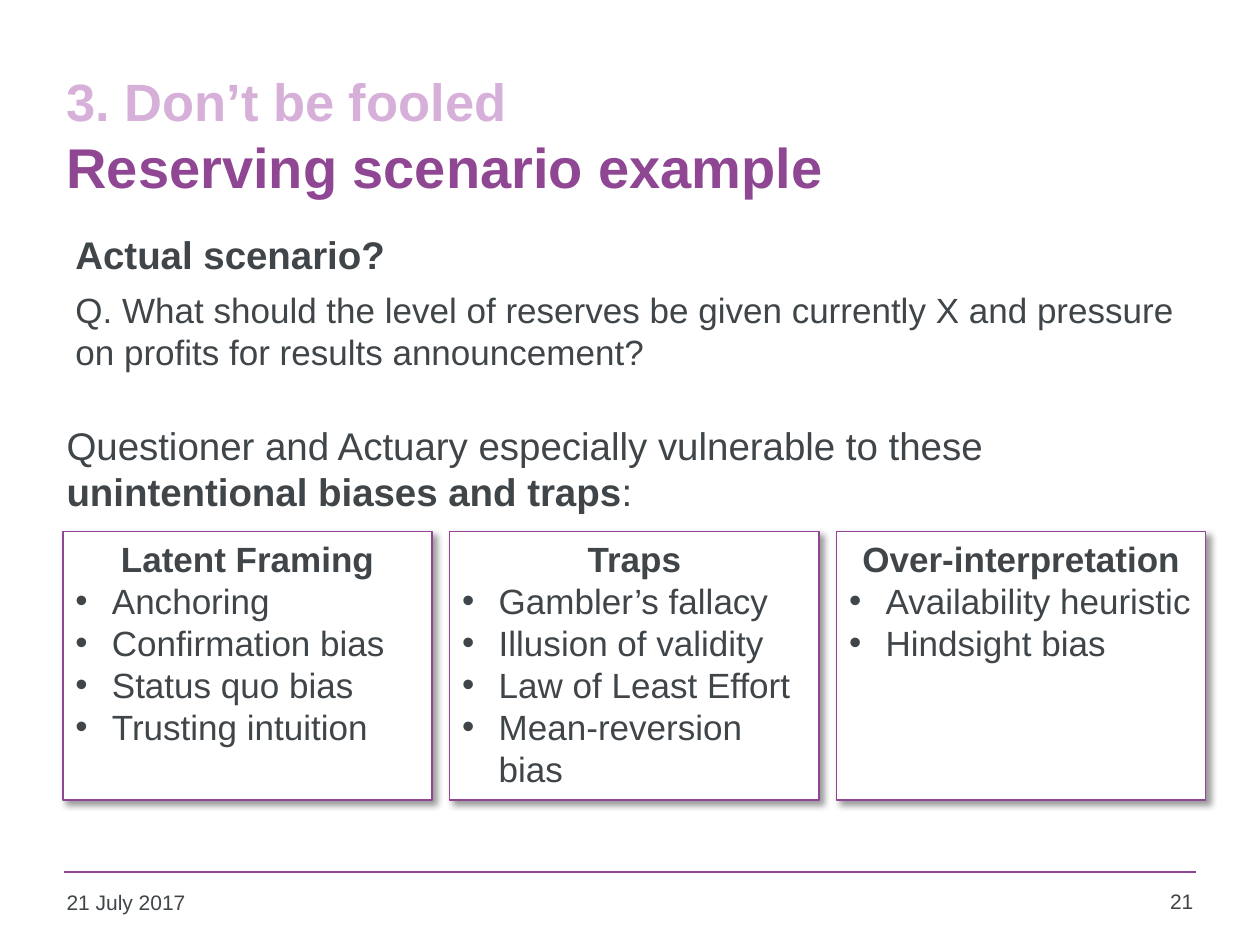
import pptx
import pptx.util
import pptx.dml.color
import pptx.enum.shapes
import pptx.enum.text
import pptx.oxml
import pptx.oxml.ns

RGB = pptx.dml.color.RGBColor
INK = RGB(0x3F, 0x45, 0x48)
PLUM = RGB(0x8F, 0x46, 0x93)
LILAC = RGB(0xD7, 0xB0, 0xD9)
WHITE = RGB(0xFF, 0xFF, 0xFF)
ALIGN = pptx.enum.text.PP_ALIGN
ANCHOR = pptx.enum.text.MSO_ANCHOR
Inches = pptx.util.Inches
Pt = pptx.util.Pt

WIDE, HIGH = 10, 7.5
LEFT, TOP = 0.5, 4.22
CARD_W, CARD_H, STEP = 2.93, 2.13, 3.07
CARDS = [
    ("Latent Framing",
     ["Anchoring", "Confirmation bias", "Status quo bias", "Trusting intuition"]),
    ("Traps",
     ["Gambler’s fallacy", "Illusion of validity", "Law of Least Effort",
      "Mean-reversion bias"]),
    ("Over-interpretation", ["Availability heuristic", "Hindsight bias"]),
]
SHADOW = (
    '<a:effectLst xmlns:a="http://schemas.openxmlformats.org/drawingml/2006/main">'
    '<a:outerShdw blurRad="50800" dist="38100" dir="2700000" algn="tl" rotWithShape="0">'
    '<a:srgbClr val="000000"><a:alpha val="40000"/></a:srgbClr>'
    '</a:outerShdw></a:effectLst>'
)


def write(text, para, size=20, bold=False, color=INK, align=ALIGN.LEFT):
    para.alignment = align
    run = para.add_run()
    run.text = text
    font = run.font
    font.name, font.size, font.bold = "Arial", Pt(size), bold
    font.color.rgb = color


def box(slide, x, y, w, h, anchor=ANCHOR.TOP):
    frame = slide.shapes.add_textbox(*map(Inches, (x, y, w, h))).text_frame
    frame.word_wrap = True
    frame.vertical_anchor = anchor
    return frame.paragraphs[0]


def bullet(para):
    props = para._p.get_or_add_pPr()
    props.set("marL", str(Inches(0.29)))
    props.set("indent", str(-Inches(0.29)))
    for tag, key, value in (("a:buFont", "typeface", "Arial"),
                            ("a:buChar", "char", "•")):
        mark = pptx.oxml.ns.qn(tag)
        props.append(props.makeelement(mark, {key: value}))


def card(slide, col, head, items):
    place = map(Inches, (LEFT + col * STEP, TOP, CARD_W, CARD_H))
    rect = slide.shapes.add_shape(pptx.enum.shapes.MSO_SHAPE.RECTANGLE, *place)
    rect.fill.solid()
    rect.fill.fore_color.rgb = WHITE
    rect.line.color.rgb = PLUM
    rect.line.width = Pt(0.75)
    rect._element.spPr.append(pptx.oxml.parse_xml(SHADOW))
    frame = rect.text_frame
    frame.word_wrap = True
    frame.vertical_anchor = ANCHOR.TOP
    write(head, frame.paragraphs[0], bold=True, align=ALIGN.CENTER)
    for item in items:
        para = frame.add_paragraph()
        write(item, para)
        bullet(para)


def rule(slide, y):
    ends = map(Inches, (0.51, y, WIDE - 0.51, y))
    line = slide.shapes.add_connector(
        pptx.enum.shapes.MSO_CONNECTOR.STRAIGHT, *ends)
    line.line.color.rgb = PLUM
    line.line.width = Pt(1)
    line._element.spPr.append(
        pptx.oxml.parse_xml(
            '<a:effectLst xmlns:a='
            '"http://schemas.openxmlformats.org/drawingml/2006/main"/>'))


def main():
    deck = pptx.Presentation()
    deck.slide_width, deck.slide_height = Inches(WIDE), Inches(HIGH)
    slide = deck.slides.add_slide(deck.slide_layouts[6])
    rule(slide, 6.92)

    title = box(slide, 0.43, 0.44, 9, 1.25, ANCHOR.MIDDLE)
    write("3. Don’t be fooled", title, size=30, bold=True, color=LILAC)
    title.add_line_break()
    write("Reserving scenario example", title, size=32, bold=True, color=PLUM)

    write("Actual scenario?", box(slide, LEFT, 1.55, 4.42, 0.7, ANCHOR.BOTTOM),
          size=22, bold=True)
    write("Q. What should the level of reserves be given currently X and "
          "pressure on profits for results announcement?",
          box(slide, LEFT, 2.24, 8.99, 0.84))

    claim = box(slide, 0.43, 3.3, 9.13, 0.84)
    write("Questioner and Actuary especially vulnerable to these ", claim, size=22)
    write("unintentional biases and traps", claim, size=22, bold=True)
    write(":", claim, size=22)

    for col, (head, items) in enumerate(CARDS):
        card(slide, col, head, items)

    write("21 July 2017", box(slide, 0.43, 7.01, 2.2, 0.36), size=12)
    write("21", box(slide, 8.86, 7, 0.71, 0.37), size=12, align=ALIGN.RIGHT)
    deck.save("out.pptx")


if __name__ == "__main__":
    main()
